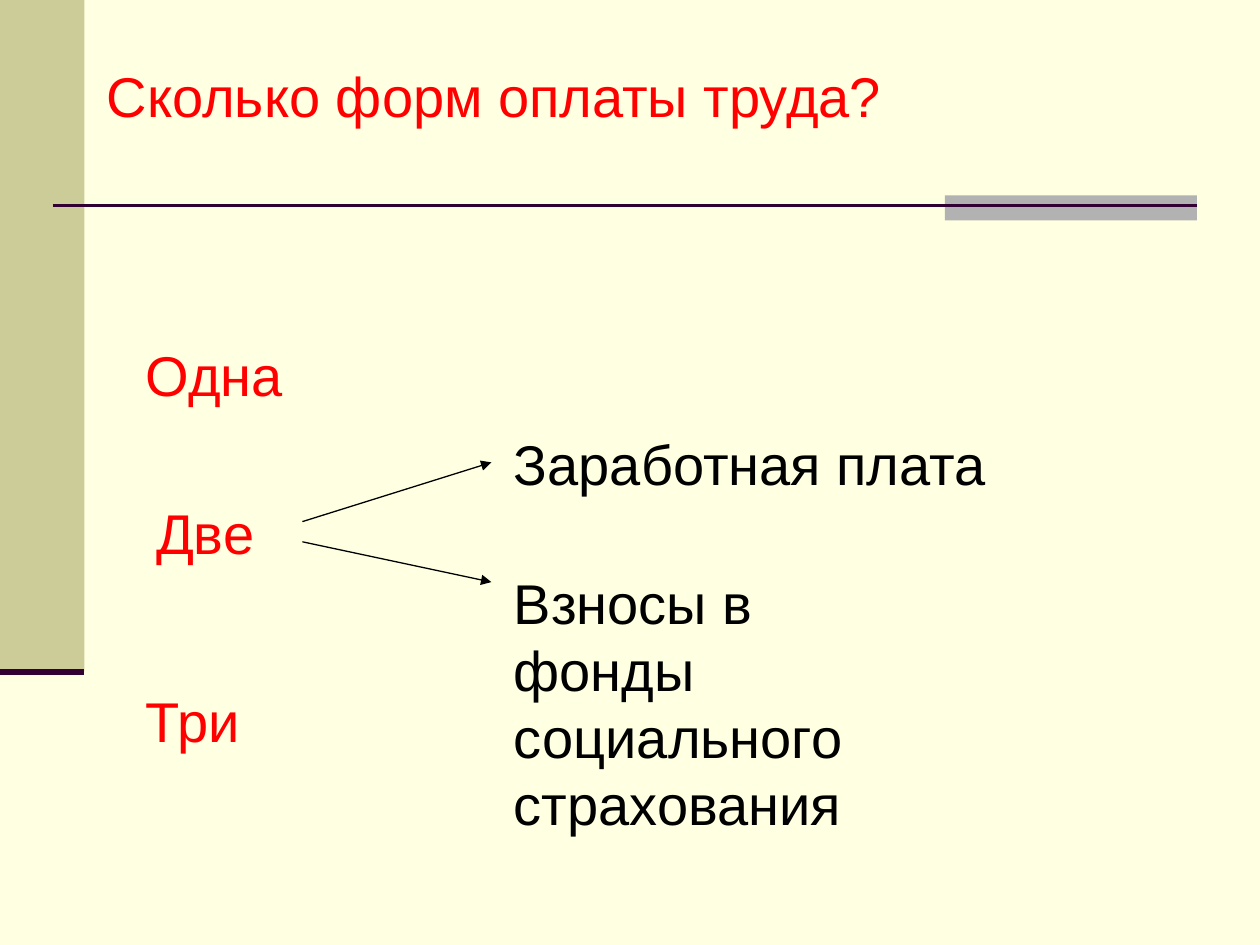
from typing import NamedTuple

from lxml import etree
from pptx import Presentation
from pptx.dml.color import RGBColor
from pptx.enum import shapes, text
from pptx.oxml import ns
from pptx.util import Inches, Pt

CREAM = RGBColor(0xFF, 0xFF, 0xE1)
KHAKI = RGBColor(0xCC, 0xCC, 0x99)
GRAY = RGBColor(0xB2, 0xB2, 0xB2)
PLUM = RGBColor(0x33, 0x00, 0x33)
RED = RGBColor(0xFF, 0x00, 0x00)
BLACK = RGBColor(0x00, 0x00, 0x00)


class Bar(NamedTuple):
    left: float
    top: float
    width: float
    height: float
    color: RGBColor


class Rule(NamedTuple):
    x1: float
    y1: float
    x2: float
    y2: float
    color: RGBColor
    weight: float
    arrow: bool = False


class Label(NamedTuple):
    left: float
    top: float
    width: float
    lines: tuple[str, ...]
    color: RGBColor
    height: float = 0.63


BARS = [
    Bar(0, 0, 0.67, 5.33, KHAKI),
    Bar(7.5, 1.55, 2, 0.2, GRAY),
]
RULES = [
    Rule(0.42, 1.63, 9.5, 1.63, PLUM, 1.5),
    Rule(0, 5.33, 0.67, 5.33, PLUM, 3.5),
]
ARROWS = [
    Rule(2.4, 4.14, 3.9, 3.67, BLACK, 0.75, True),
    Rule(2.4, 4.3, 3.9, 4.62, BLACK, 0.75, True),
]
LABELS = [
    # Question
    Label(0.75, 0.44, 8.74, ("Сколько форм оплаты труда?",), RED),
    # Answers
    Label(1.06, 2.65, 1.5, ("Одна",), RED),
    Label(1.14, 3.91, 1.26, ("Две",), RED),
    Label(1.06, 5.4, 1.02, ("Три",), RED),
    # Forms of pay
    Label(3.98, 3.36, 4.17, ("Заработная плата",), BLACK),
    Label(3.98, 4.46, 3.6, ("Взносы в фонды", "социального страхования"), BLACK, 2.23),
]


def draw_bar(slide, bar: Bar) -> None:
    box = slide.shapes.add_shape(
        shapes.MSO_SHAPE.RECTANGLE, Inches(bar.left), Inches(bar.top),
        Inches(bar.width), Inches(bar.height))
    box.shadow.inherit = False
    box.fill.solid()
    box.fill.fore_color.rgb = bar.color
    box.line.fill.background()


def draw_rule(slide, rule: Rule) -> None:
    line = slide.shapes.add_connector(
        shapes.MSO_CONNECTOR.STRAIGHT, Inches(rule.x1), Inches(rule.y1),
        Inches(rule.x2), Inches(rule.y2))
    line.line.color.rgb = rule.color
    line.line.width = Pt(rule.weight)
    if rule.arrow:
        tail = etree.SubElement(line.line._get_or_add_ln(), ns.qn("a:tailEnd"))
        tail.set("type", "triangle")
    etree.SubElement(line._element.spPr, ns.qn("a:effectLst"))


def draw_label(slide, label: Label) -> None:
    box = slide.shapes.add_textbox(
        Inches(label.left), Inches(label.top),
        Inches(label.width), Inches(label.height))
    frame = box.text_frame
    frame.word_wrap = True
    frame.auto_size = text.MSO_AUTO_SIZE.SHAPE_TO_FIT_TEXT
    for i, words in enumerate(label.lines):
        para = frame.add_paragraph() if i else frame.paragraphs[0]
        run = para.add_run()
        run.text = words
        run.font.name = "Arial"
        run.font.size = Pt(32)
        run.font.color.rgb = label.color


def main() -> None:
    deck = Presentation()
    deck.slide_width, deck.slide_height = Inches(10), Inches(7.5)
    slide = deck.slides.add_slide(deck.slide_layouts[6])
    slide.background.fill.solid()
    slide.background.fill.fore_color.rgb = CREAM

    # Frame, then arrows and text
    for bar in BARS:
        draw_bar(slide, bar)
    for rule in RULES + ARROWS:
        draw_rule(slide, rule)
    for label in LABELS:
        draw_label(slide, label)

    deck.save("out.pptx")


if __name__ == "__main__":
    main()
